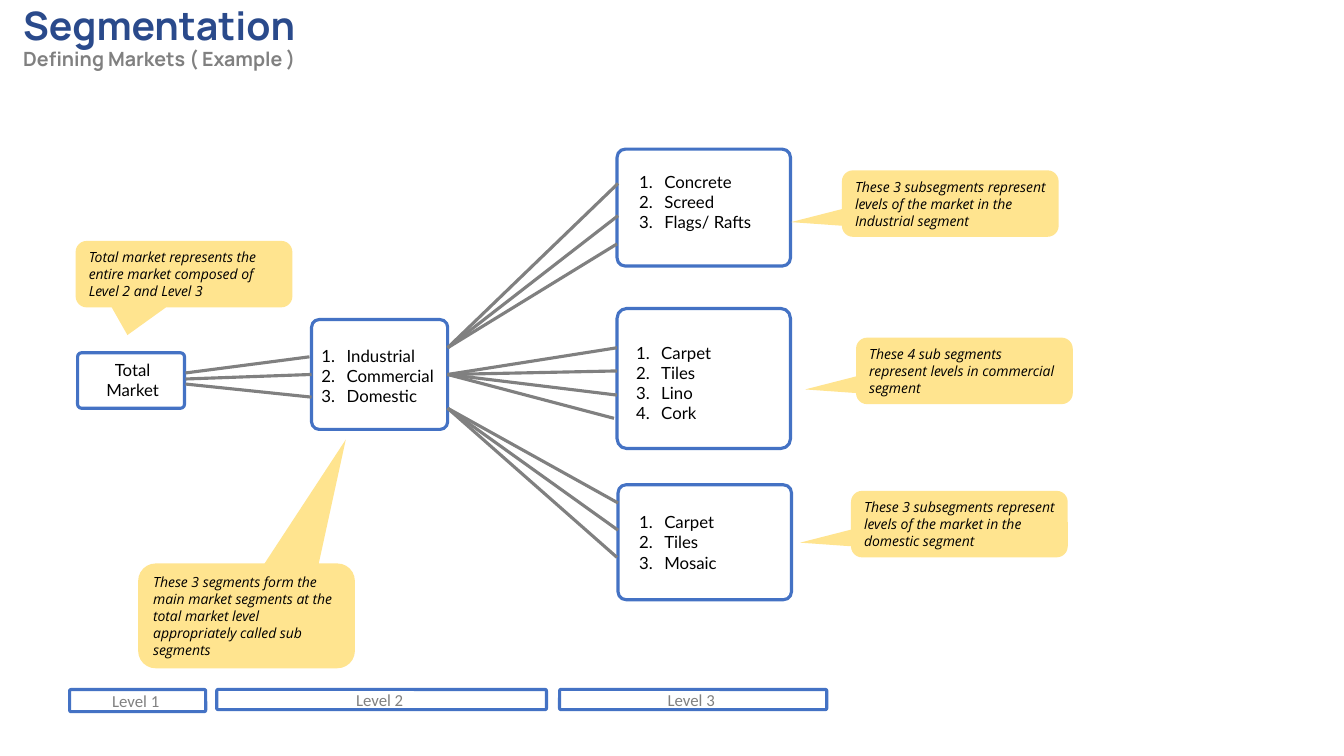
from lxml.etree import SubElement
from pptx import Presentation
from pptx.dml.color import RGBColor
from pptx.enum.shapes import MSO_CONNECTOR, MSO_SHAPE
from pptx.enum.text import MSO_ANCHOR, PP_ALIGN
from pptx.oxml.ns import qn
from pptx.util import Inches, Pt

BLUE, NAVY, GREY = "4472C4", "2A4A8B", "808080"
YELLOW, WHITE, BLACK = "FFE48F", "FFFFFF", "000000"


def rgb(value):
    return RGBColor.from_string(value)


def write(tf, lines, font="Lato", size=12, color=BLACK, bold=False, italic=False,
          align=PP_ALIGN.LEFT, anchor=MSO_ANCHOR.TOP, spacing=None, numbered=False):
    """Put one paragraph per line into a text frame; size may be a list, one per line."""
    tf.word_wrap = True
    tf.vertical_anchor = anchor
    for i, line in enumerate(lines):
        p = tf.paragraphs[0] if i == 0 else tf.add_paragraph()
        p.alignment = align
        if spacing:
            p.line_spacing = spacing
        if numbered:
            pPr = p._p.get_or_add_pPr()
            pPr.set("marL", str(Inches(0.25)))
            pPr.set("indent", str(-Inches(0.25)))
            SubElement(pPr, qn("a:buFont"), typeface="+mj-lt")
            SubElement(pPr, qn("a:buAutoNum"), type="arabicPeriod")
        r = p.add_run()
        r.text = line
        r.font.name = font
        r.font.size = Pt(size[i] if isinstance(size, list) else size)
        r.font.bold, r.font.italic = bold, italic
        r.font.color.rgb = rgb(color[i] if isinstance(color, list) else color)


class MarketSlide:
    def __init__(self, prs):
        self.slide = prs.slides.add_slide(prs.slide_layouts[5])
        self.shapes = self.slide.shapes

    def title(self, lines, left, top, width, height):
        sp = self.shapes.title
        sp.left, sp.top = Inches(left), Inches(top)
        sp.width, sp.height = Inches(width), Inches(height)
        write(sp.text_frame, lines, font="Manrope", size=[28, 14], color=[NAVY, GREY],
              bold=True, spacing=0.9)

    def shape(self, kind, at, fill):
        sp = self.shapes.add_shape(kind, *map(Inches, at))
        sp.shadow.inherit = False
        sp.fill.solid()
        sp.fill.fore_color.rgb = rgb(fill)
        sp.line.fill.background()
        return sp

    def box(self, *at):
        sp = self.shape(MSO_SHAPE.ROUNDED_RECTANGLE, at, WHITE)
        sp.adjustments[0] = 0.07
        sp.line.color.rgb = rgb(BLUE)
        sp.line.width = Pt(2.25)
        return sp

    def text(self, lines, *at, **style):
        write(self.shapes.add_textbox(*map(Inches, at)).text_frame, lines, **style)

    def callout(self, words, left, top, height=0.66, tip=(-0.735, 0.279)):
        sp = self.shape(MSO_SHAPE.ROUNDED_RECTANGULAR_CALLOUT, (left, top, 2.15, height), YELLOW)
        sp.adjustments[0], sp.adjustments[1] = tip
        write(sp.text_frame, [words], font="Open Sans", size=10, italic=True,
              anchor=MSO_ANCHOR.MIDDLE)

    def line(self, start, end, source=None, target=None):
        """Draw a line; source and target are boxes joined at their right and left middles."""
        c = self.shapes.add_connector(MSO_CONNECTOR.STRAIGHT, *map(Inches, start + end))
        c.line.color.rgb = rgb(GREY)
        c.line.width = Pt(2.25)
        SubElement(c._element.spPr, qn("a:effectLst"))
        if source:
            c.begin_connect(source, 3)
        if target:
            c.end_connect(target, 1)


def main():
    prs = Presentation()
    prs.slide_width, prs.slide_height = Inches(13.33), Inches(7.5)
    s = MarketSlide(prs)
    s.title(["Segmentation", "Defining Markets ( Example )"], 0.13, 0.02, 10.53, 0.81)

    s.box(0.77, 3.5, 1.06, 0.55)
    segments = s.box(3.09, 3.17, 1.35, 1.09)
    s.text(["Total", "Market"], 0.77, 3.52, 1.09, 0.5, align=PP_ALIGN.CENTER)
    s.text(["Industrial", "Commercial", "Domestic"], 3.09, 3.38, 1.34, 0.71, numbered=True)

    s.line((1.84, 3.7), (3.07, 3.54))
    s.line((1.84, 3.76), (3.09, 3.73), target=segments)
    s.line((1.84, 3.81), (3.09, 3.94))

    # Box, list position and items, then where the fan of lines starts and ends
    branches = [
        ((6.12, 1.48, 1.72, 1.16), (6.24, 1.65), ["Concrete", "Screed", "Flags/ Rafts"],
         3.45, [(6.13, 1.82), (6.13, 2.14), (6.12, 2.42)], None),
        ((6.12, 3.06, 1.72, 1.39), (6.21, 3.35), ["Carpet", "Tiles", "Lino", "Cork"],
         3.73, [(6.12, 3.45), (6.12, 3.68), (6.12, 3.92), (6.09, 4.15)], segments),
        ((6.13, 4.81, 1.72, 1.14), (6.24, 5.03), ["Carpet", "Tiles", "Mosaic"],
         4.05, [(6.13, 4.99), (6.13, 5.26), (6.12, 5.53)], None),
    ]
    for box, (left, top), items, start, ends, source in branches:
        s.box(*box)
        s.text(items, left, top, 1.72, 0.1 + 0.2 * len(items), numbered=True)
        for end in ends:
            s.line((4.44, start), end, source)

    s.callout("These 3 segments form the main market segments at the total market level "
              "appropriately called sub segments", 1.37, 5.59, 1.04, (0.458, -1.682))
    s.callout("Total market represents the entire market composed of Level 2 and Level 3",
              0.75, 2.39, tip=(-0.261, 0.916))
    s.callout("These 3 subsegments represent levels of the market in the Industrial segment",
              8.35, 1.69)
    s.callout("These 4 sub segments represent levels in commercial segment", 8.49, 3.35)
    s.callout("These 3 subsegments represent levels of the market in the domestic segment",
              8.44, 4.87)

    levels = [(0.69, 1.35, 0.22), (2.15, 3.27, 0.2), (5.55, 2.65, 0.2)]
    for number, (left, width, height) in enumerate(levels, 1):
        sp = s.box(left, 6.84, width, height)
        write(sp.text_frame, [f"Level {number} "], font="Calibri", color=GREY,
              align=PP_ALIGN.CENTER, anchor=MSO_ANCHOR.MIDDLE)

    prs.save("out.pptx")


if __name__ == "__main__":
    main()
